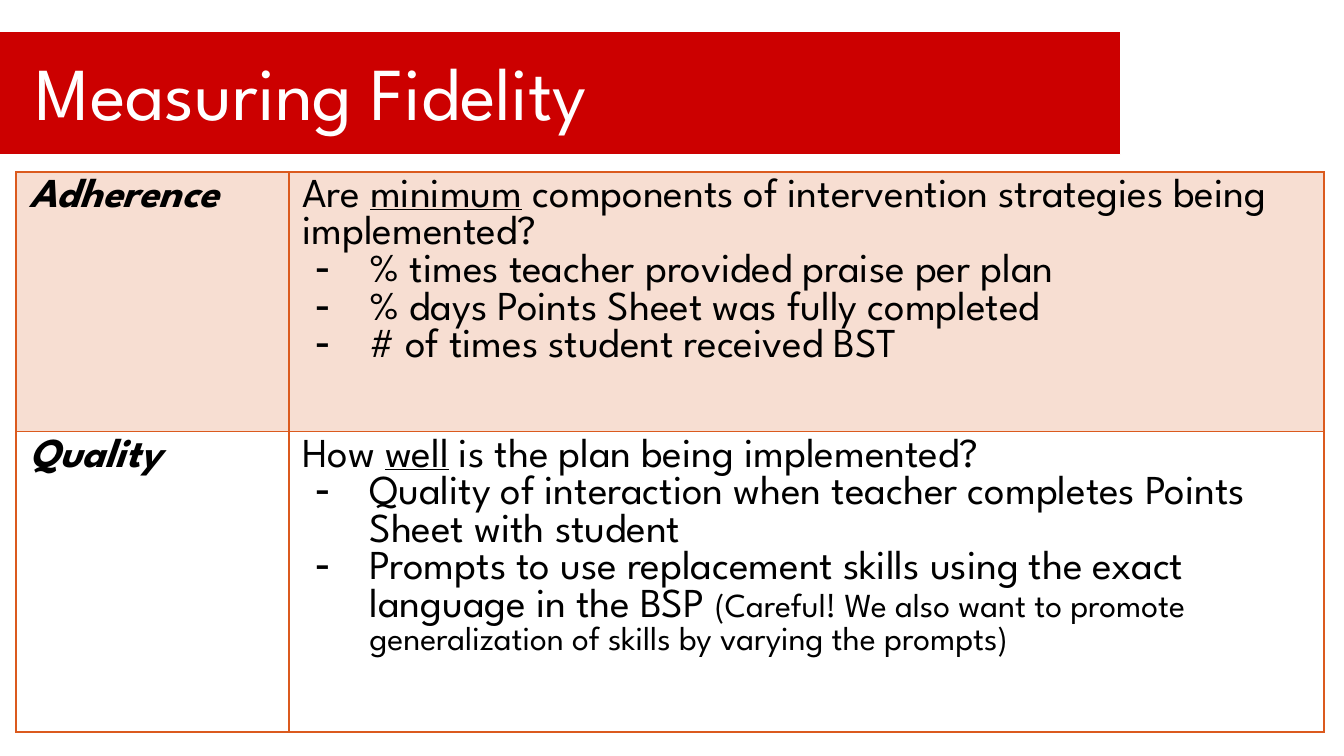
from dataclasses import dataclass

from lxml import etree
from pptx import Presentation
from pptx.dml.color import RGBColor
from pptx.enum.shapes import MSO_SHAPE
from pptx.enum.text import MSO_ANCHOR
from pptx.oxml.ns import qn
from pptx.util import Cm, Pt

RECT = MSO_SHAPE.RECTANGLE
MIDDLE = MSO_ANCHOR.MIDDLE


@dataclass(frozen=True)
class Theme:
    """Colours, font and type sizes of the slide."""
    font: str = "League Spartan"
    banner: str = "CC0000"
    accent: str = "DB5A1E"
    light: str = "FFFFFF"
    dark: str = "000000"
    title: int = 40
    body: int = 22
    note: int = 18
    tint: int = 20


THEME = Theme()

ROWS = [
    ("Adherence",
     ("Are ", "minimum",
      " components of intervention strategies being implemented?"),
     [("% times teacher provided praise per plan", ""),
      ("% days Points Sheet was fully completed", ""),
      ("# of times student received BST", "")]),
    ("Quality",
     ("How ", "well", " is the plan being implemented?"),
     [("Quality of interaction when teacher completes Points Sheet "
       "with student", ""),
      ("Prompts to use replacement skills using the exact language "
       "in the BSP ",
       "(Careful! We also want to promote generalization of skills "
       "by varying the prompts)")]),
]


def add_text(p, text, size=THEME.body, color=THEME.dark, bold=False,
             italic=False, underline=False):
    """Append one formatted run to a paragraph."""
    r = p.add_run()
    r.text = text
    f = r.font
    f.name, f.size = THEME.font, Pt(size)
    f.bold, f.italic, f.underline = bold, italic, underline
    f.color.rgb = RGBColor.from_string(color)


def add_dash(p):
    """Give a paragraph a hanging dash bullet."""
    pPr = p._p.get_or_add_pPr()
    pPr.set("marL", str(Cm(1.27)))
    pPr.set("indent", str(-Cm(1.02)))
    etree.SubElement(pPr, qn("a:buChar"), char="-")


def style_cell(cell, tinted):
    """Set the fill and the four borders of a cell."""
    tcPr = cell._tc.get_or_add_tcPr()
    if tinted:
        cell.fill.solid()
        cell.fill.fore_color.rgb = RGBColor.from_string(THEME.accent)
        color = tcPr.find(".//" + qn("a:srgbClr"))
        etree.SubElement(color, qn("a:alpha"), val=str(THEME.tint * 1000))
    else:
        cell.fill.background()
    for i, side in enumerate(("lnL", "lnR", "lnT", "lnB")):
        ln = etree.Element(qn("a:" + side), w=str(Pt(1)))
        fill = etree.SubElement(ln, qn("a:solidFill"))
        etree.SubElement(fill, qn("a:srgbClr"), val=THEME.accent)
        tcPr.insert(i, ln)


def add_banner(s, x, y, w, h):
    """Draw the red banner with the slide title."""
    sp = s.shapes.add_shape(RECT, Cm(x), Cm(y), Cm(w), Cm(h))
    sp.shadow.inherit = False
    sp.fill.solid()
    sp.fill.fore_color.rgb = RGBColor.from_string(THEME.banner)
    sp.line.color.rgb = RGBColor.from_string(THEME.light)
    sp.line.width = Pt(0.75)
    box = s.shapes.add_textbox(Cm(x + 0.63), Cm(y + 0.1),
                               Cm(w - 0.63), Cm(2.06))
    tf = box.text_frame
    tf.word_wrap = True
    tf.vertical_anchor = MIDDLE
    add_text(tf.paragraphs[0], "Measuring Fidelity", size=THEME.title,
             color=THEME.light)


def add_measures(s, x, y, widths, heights):
    """Draw the table with one row for each fidelity measure."""
    table = s.shapes.add_table(len(heights), len(widths), Cm(x), Cm(y),
                               Cm(sum(widths)), Cm(sum(heights))).table
    table.first_row = table.horz_banding = False
    for col, w in zip(table.columns, widths):
        col.width = Cm(w)
    for i, (h, (name, question, items)) in enumerate(zip(heights, ROWS)):
        table.rows[i].height = Cm(h)
        label, detail = table.cell(i, 0), table.cell(i, 1)
        for cell in (label, detail):
            style_cell(cell, tinted=i % 2 == 0)
        add_text(label.text_frame.paragraphs[0], name, bold=True, italic=True)
        tf = detail.text_frame
        for j, part in enumerate(question):
            add_text(tf.paragraphs[0], part, underline=j == 1)
        for text, note in items:
            p = tf.add_paragraph()
            add_dash(p)
            add_text(p, text)
            if note:
                add_text(p, note, size=THEME.note)


def main():
    """Build and save the slide."""
    prs = Presentation()
    prs.slide_width, prs.slide_height = Cm(25.4), Cm(14.29)
    s = prs.slides.add_slide(prs.slide_layouts[6])
    add_banner(s, -0.2, 0.59, 21.38, 2.33)
    add_measures(s, 0.3, 3.25, widths=(5.16, 19.56), heights=(4.88, 5.64))
    prs.save("out.pptx")


if __name__ == "__main__":
    main()
